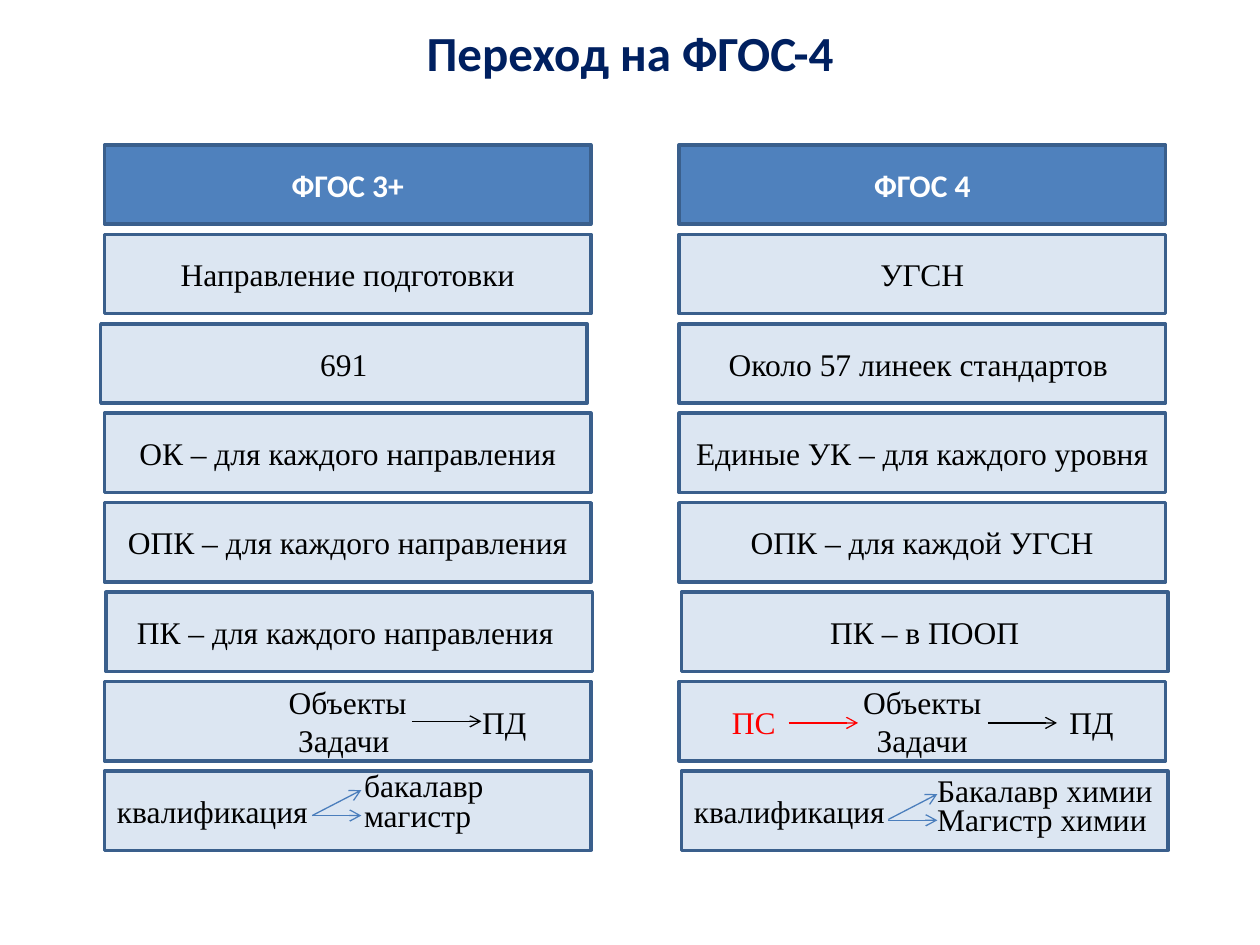
from dataclasses import dataclass

from lxml.etree import SubElement
from pptx import Presentation
from pptx.dml.color import RGBColor
from pptx.enum.shapes import MSO_CONNECTOR, MSO_SHAPE
from pptx.enum.text import MSO_ANCHOR, MSO_AUTO_SIZE, PP_ALIGN
from pptx.oxml.ns import qn
from pptx.util import Inches, Pt


@dataclass(frozen=True)
class Theme:
    title: str = "002060"
    header_fill: str = "4F81BD"
    header_text: str = "FFFFFF"
    card_fill: str = "DCE6F2"
    border: str = "3A5F8C"
    text: str = "000000"
    accent: str = "FF0000"
    branch: str = "4B7EBC"
    heading_font: str = "Calibri"
    body_font: str = "Times New Roman"
    title_size: int = 28
    body_size: int = 18
    border_width: float = 2
    arrow_width: float = 0.75


@dataclass(frozen=True)
class Grid:
    lefts: tuple[float, ...] = (0.83, 5.39)
    top: float = 1.15
    row_pitch: float = 0.71
    width: float = 3.86
    height: float = 0.63

    def point(self, column: int, row: int, x: float = 0, y: float = 0):
        """Position inside a card; x and y are percent of its size."""
        return (Inches(self.lefts[column] + self.width * x / 100),
                Inches(self.top + self.row_pitch * row + self.height * y / 100))

    def size(self, x: float = 100, y: float = 100):
        return Inches(self.width * x / 100), Inches(self.height * y / 100)


@dataclass(frozen=True)
class Label:
    column: int
    row: int
    x: float
    y: float
    width: float
    text: str
    color: str


@dataclass(frozen=True)
class Arrow:
    column: int
    row: int
    start: tuple[float, float]
    end: tuple[float, float]
    color: str


THEME = Theme()
GRID = Grid()
OBJECTS_ROW, DEGREE_ROW = 6, 7

STANDARDS = (
    ("ФГОС 3+", "Направление подготовки", "691", "ОК – для каждого направления",
     "ОПК – для каждого направления", "ПК – для каждого направления ",
     "Объекты\nЗадачи ", "квалификация"),
    ("ФГОС 4", "УГСН", "Около 57 линеек стандартов ",
     "Единые УК – для каждого уровня", "ОПК – для каждой УГСН", "ПК – в ПООП",
     "Объекты\nЗадачи", "квалификация"),
)

# Sideways shift of single cards, percent of card width
SHIFTS = {(0, 2): -0.8, (0, 5): 0.3, (1, 5): 0.5, (1, 7): 0.5}

LABELS = (
    Label(0, OBJECTS_ROW, 75.1, 19, 14.5, "ПД", THEME.text),
    Label(1, OBJECTS_ROW, 8.3, 19, 14.2, "ПС", THEME.accent),
    Label(1, OBJECTS_ROW, 77.7, 19, 14.5, "ПД", THEME.text),
    Label(0, DEGREE_ROW, 50.8, -14, 30.1, "бакалавр", THEME.text),
    Label(0, DEGREE_ROW, 50.8, 24, 27.5, "магистр", THEME.text),
    Label(1, DEGREE_ROW, 50.5, -8, 50, "Бакалавр химии", THEME.text),
    Label(1, DEGREE_ROW, 50.5, 29, 48.7, "Магистр химии", THEME.text),
)

ARROWS = (
    Arrow(0, OBJECTS_ROW, (63.2, 50), (77.5, 50), THEME.text),
    Arrow(1, OBJECTS_ROW, (22.5, 52), (36.8, 52), THEME.accent),
    Arrow(1, OBJECTS_ROW, (63.5, 52), (77.7, 52), THEME.text),
    Arrow(0, DEGREE_ROW, (42.7, 56), (52.8, 24), THEME.branch),
    Arrow(0, DEGREE_ROW, (42.7, 56), (52.8, 56), THEME.branch),
    Arrow(1, DEGREE_ROW, (43, 61), (53.1, 29), THEME.branch),
    Arrow(1, DEGREE_ROW, (43, 62), (53.1, 62), THEME.branch),
)


def write(frame, text: str, color: str, font: str = THEME.body_font,
          size: int = THEME.body_size, bold: bool = False,
          align=PP_ALIGN.CENTER) -> None:
    frame.text = text
    for paragraph in frame.paragraphs:
        paragraph.alignment = align
        for run in paragraph.runs:
            run.font.name = font
            run.font.size = Pt(size)
            run.font.bold = bold
            run.font.color.rgb = RGBColor.from_string(color)


def draw_title(slide, text: str, slide_width: int, slide_height: int) -> None:
    box = slide.shapes.add_textbox(int(slide_width * 0.05), int(slide_height * 0.01),
                                   int(slide_width * 0.9), int(slide_height * 0.09))
    box.text_frame.word_wrap = True
    box.text_frame.vertical_anchor = MSO_ANCHOR.MIDDLE
    write(box.text_frame, text, THEME.title, THEME.heading_font,
          THEME.title_size, bold=True)


def draw_card(slide, column: int, row: int, text: str) -> None:
    position = GRID.point(column, row, SHIFTS.get((column, row), 0))
    card = slide.shapes.add_shape(MSO_SHAPE.RECTANGLE, *position, *GRID.size())
    is_header = row == 0
    card.shadow.inherit = False
    card.fill.solid()
    card.fill.fore_color.rgb = RGBColor.from_string(
        THEME.header_fill if is_header else THEME.card_fill)
    card.line.color.rgb = RGBColor.from_string(THEME.border)
    card.line.width = Pt(THEME.border_width)
    card.text_frame.word_wrap = True
    card.text_frame.vertical_anchor = MSO_ANCHOR.MIDDLE
    if is_header:
        write(card.text_frame, text, THEME.header_text, THEME.heading_font, bold=True)
    else:
        align = PP_ALIGN.LEFT if row == DEGREE_ROW else PP_ALIGN.CENTER
        write(card.text_frame, text, THEME.text, align=align)


def draw_label(slide, label: Label) -> None:
    box = slide.shapes.add_textbox(
        *GRID.point(label.column, label.row, label.x, label.y),
        *GRID.size(label.width, 63.5))
    box.text_frame.word_wrap = False
    box.text_frame.auto_size = MSO_AUTO_SIZE.SHAPE_TO_FIT_TEXT
    write(box.text_frame, label.text, label.color, align=PP_ALIGN.LEFT)


def draw_arrow(slide, arrow: Arrow) -> None:
    connector = slide.shapes.add_connector(
        MSO_CONNECTOR.STRAIGHT,
        *GRID.point(arrow.column, arrow.row, *arrow.start),
        *GRID.point(arrow.column, arrow.row, *arrow.end))
    connector.line.color.rgb = RGBColor.from_string(arrow.color)
    connector.line.width = Pt(THEME.arrow_width)
    properties = connector.element.spPr
    SubElement(properties.find(qn("a:ln")), qn("a:tailEnd"), type="arrow")
    SubElement(properties, qn("a:effectLst"))


def main() -> None:
    deck = Presentation()
    deck.slide_width, deck.slide_height = Inches(10), Inches(7.5)
    slide = deck.slides.add_slide(deck.slide_layouts[6])

    draw_title(slide, "Переход на ФГОС-4", deck.slide_width, deck.slide_height)

    # Two standards side by side
    for column, cards in enumerate(STANDARDS):
        for row, text in enumerate(cards):
            draw_card(slide, column, row, text)

    # Relations inside the last two rows
    for label in LABELS:
        draw_label(slide, label)
    for arrow in ARROWS:
        draw_arrow(slide, arrow)

    deck.save("out.pptx")


if __name__ == "__main__":
    main()
